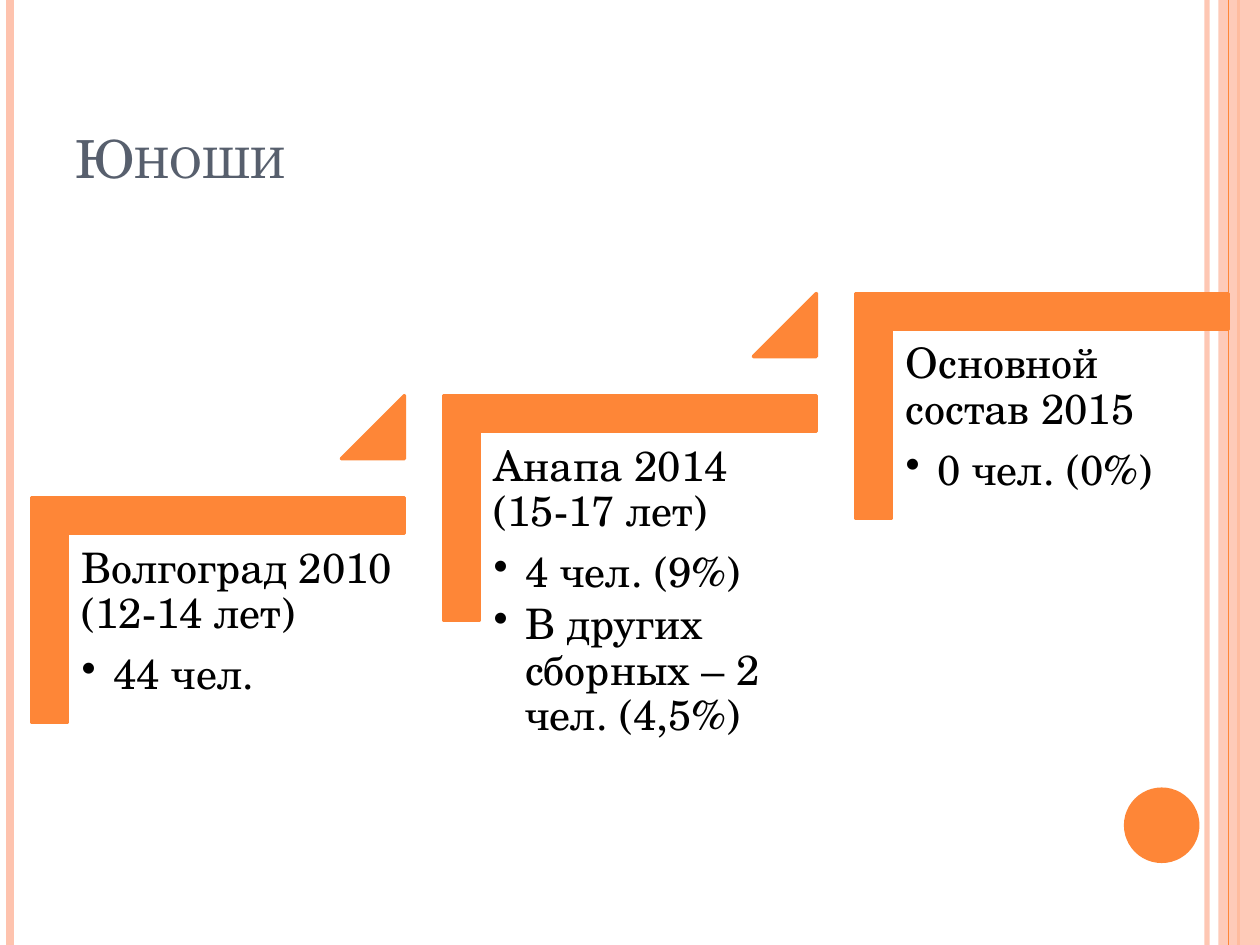
from lxml.etree import SubElement
from pptx import Presentation
from pptx.dml.color import RGBColor
from pptx.enum.shapes import MSO_CONNECTOR, MSO_SHAPE
from pptx.enum.text import MSO_ANCHOR
from pptx.oxml.ns import qn
from pptx.util import Inches, Pt

ORANGE = RGBColor(0xFE, 0x86, 0x37)
PINK = RGBColor(0xFE, 0xC3, 0xAE)
SLATE = RGBColor(0x57, 0x5F, 0x6D)
BLACK = RGBColor(0, 0, 0)

STEPS = [
    ("Волгоград 2010 (12-14 лет)", ["44 чел."]),
    ("Анапа 2014 (15-17 лет)",
     ["4 чел. (9%)", "В других сборных – 2 чел. (4,5%)"]),
    ("Основной состав 2015", ["0 чел. (0%)"]),
]
STEP_X, STEP_Y = 3.27, -0.81


class Board:
    """Holds the style and the current slide."""

    def __init__(self, slide, font):
        self.slide = slide
        self.shapes = slide.shapes
        self.font = font

    def fade(self, fill, part):
        """Set the opacity of a solid fill, in percent."""
        color = fill._xPr.find(qn("a:solidFill"))[0]
        SubElement(color, qn("a:alpha"), val=str(part * 1000))

    def stripe(self, x, width, color, part=100):
        line = self.shapes.add_connector(
            MSO_CONNECTOR.STRAIGHT, Inches(x), 0, Inches(x), Inches(7.5))
        line.line.color.rgb = color
        line.line.width = Pt(width)
        if part < 100:
            self.fade(line.line.fill, part)
        SubElement(line._element.spPr, qn("a:effectLst"))

    def shape(self, kind, box, color, edge=0, turn=0, adjust=(), part=100):
        item = self.shapes.add_shape(kind, *map(Inches, box))
        item.shadow.inherit = False
        item.rotation = turn
        for i, value in enumerate(adjust):
            item.adjustments[i] = value
        item.fill.solid()
        item.fill.fore_color.rgb = color
        if part < 100:
            self.fade(item.fill, part)
        if edge:
            item.line.color.rgb = color
            item.line.width = Pt(edge)
        else:
            item.line.fill.background()

    def frame(self, box):
        frame = self.shapes.add_textbox(*map(Inches, box)).text_frame
        frame.word_wrap = True
        return frame

    def style(self, para, size, color):
        for run in para.runs:
            run.font.name = self.font
            run.font.size = Pt(size)
            run.font.color.rgb = color

    def title(self, text, box):
        frame = self.frame(box)
        frame.vertical_anchor = MSO_ANCHOR.BOTTOM
        frame.text = text
        para = frame.paragraphs[0]
        self.style(para, 30, SLATE)
        para.runs[0].font._element.set("cap", "small")

    def bullet(self, para):
        para.level = 1
        props = para._p.get_or_add_pPr()
        props.set("marL", str(Inches(0.25)))
        props.set("indent", str(-Inches(0.25)))
        SubElement(props, qn("a:buChar"), char="•")

    def notes(self, head, items, box):
        """Write a heading with bulleted lines under it."""
        frame = self.frame(box)
        frame.margin_top = frame.margin_bottom = Inches(0.1)
        frame.text = "\n".join([head, *items])
        for i, para in enumerate(frame.paragraphs):
            para.line_spacing = 0.9
            para.space_after = Pt(4 if i else 9)
            if i:
                self.bullet(para)
            self.style(para, 24, BLACK)

    def step(self, index, head, items, last):
        dx, dy = index * STEP_X, index * STEP_Y
        self.shape(MSO_SHAPE.CORNER, (0.84 + dx, 3.36 + dy, 1.78, 2.96),
                   ORANGE, 2, 90, (0.16, 0.16))
        self.notes(head, items, (0.55 + dx, 4.24 + dy, 2.67, 2.34))
        if not last:
            self.shape(MSO_SHAPE.ISOSCELES_TRIANGLE,
                       (2.71 + dx, 3.14 + dy, 0.5, 0.5), ORANGE, 2, 0, (1,))


def main():
    deck = Presentation()
    deck.slide_width, deck.slide_height = Inches(10), Inches(7.5)
    board = Board(deck.slides.add_slide(deck.slide_layouts[6]),
                  "TeX Gyre Schola")
    board.stripe(9.58, 3, PINK, 93)
    board.stripe(0.08, 4.5, PINK)
    board.stripe(9.83, 1.5, ORANGE)
    board.shape(MSO_SHAPE.RECTANGLE, (9.67, 0, 0.33, 7.5), PINK, part=87)
    board.stripe(9.75, 0.75, ORANGE)
    board.shape(MSO_SHAPE.OVAL, (8.92, 6.25, 0.6, 0.6), ORANGE)
    board.title("Юноши", (0.5, 0.3, 8.17, 1.25))
    for i, (head, items) in enumerate(STEPS):
        board.step(i, head, items, i == len(STEPS) - 1)
    deck.save("out.pptx")


if __name__ == "__main__":
    main()
